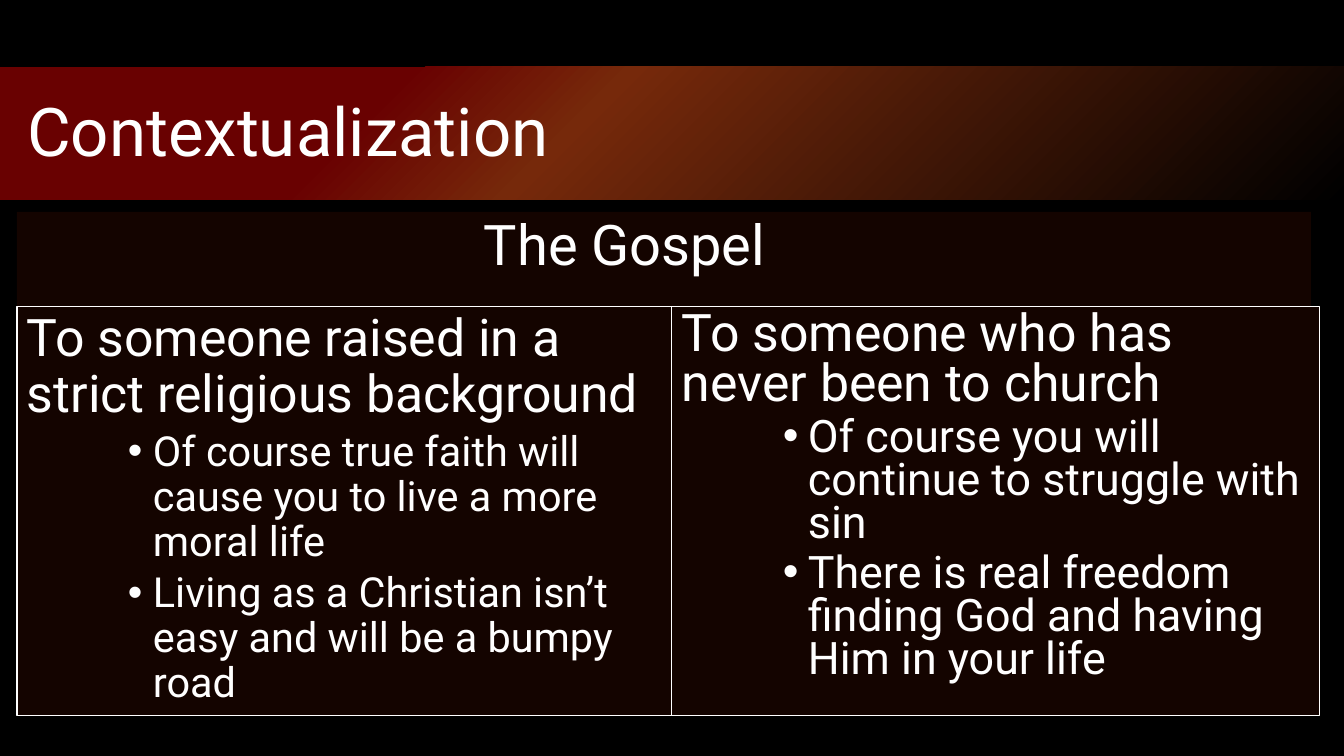
from lxml.etree import SubElement
from pptx import Presentation
from pptx.dml.color import RGBColor
from pptx.enum.shapes import MSO_SHAPE
from pptx.enum.text import MSO_ANCHOR, MSO_AUTO_SIZE, PP_ALIGN
from pptx.oxml import parse_xml
from pptx.oxml.ns import nsdecls, qn
from pptx.util import Emu, Pt

THEME = {
    "font": "Roboto", "text": "FFFFFF", "background": "000000",
    "panel": "A62805", "panel_alpha": 12,
    "bar": [(0, "000000"), (57, "76290B"), (72, "690101")],
    "title": 48, "subject": 40, "heading": 37,
}
TITLE_ONLY = 5


def px(length):
    return Emu(round(length * 12192000 / 1344))


def write(para, text, size, spacing, before=0, indent=0, hanging=0):
    """Fill one paragraph; a hanging indent gets a bullet."""
    props = para._p.get_or_add_pPr()
    props.set("marL", str(px(indent)))
    props.set("indent", str(-px(hanging)))
    para.alignment = PP_ALIGN.LEFT
    para.line_spacing = spacing
    para.space_before = Pt(before)
    if hanging:
        SubElement(props, qn("a:buFont"), typeface="Arial")
        SubElement(props, qn("a:buChar"), char="•")
    span = para.add_run()
    span.text = text
    span.font.name = THEME["font"]
    span.font.size = Pt(size)
    span.font.color.rgb = RGBColor.from_string(THEME["text"])


deck = Presentation()
deck.slide_width, deck.slide_height = px(1344), px(756)
page = deck.slides.add_slide(deck.slide_layouts[TITLE_ONLY])
page.background.fill.solid()
page.background.fill.fore_color.rgb = RGBColor.from_string(THEME["background"])

# Title bar with a radial gradient from the bottom right corner
bar = page.shapes.add_shape(MSO_SHAPE.RECTANGLE, 0, px(67), px(1344), px(133))
bar.shadow.inherit = False
bar.line.fill.background()
bar.fill.background()
stops = "".join(
    f'<a:gs pos="{place * 1000}"><a:srgbClr val="{color}"/></a:gs>'
    for place, color in THEME["bar"])
gradient = parse_xml(
    f'<a:gradFill {nsdecls("a")} rotWithShape="1"><a:gsLst>{stops}</a:gsLst>'
    '<a:path path="circle"><a:fillToRect l="100000" t="100000"/></a:path>'
    '</a:gradFill>')
bar_props = bar.element.spPr
bar_props.replace(bar_props.find(qn("a:noFill")), gradient)

# Title, brought in front of the bar
title = page.shapes.title
title.left, title.top, title.width, title.height = px(17), px(75), px(1294), px(119)
title.text_frame.auto_size = MSO_AUTO_SIZE.NONE
title.text_frame.vertical_anchor = MSO_ANCHOR.MIDDLE
write(title.text_frame.paragraphs[0], "Contextualization", THEME["title"], 0.9)
page.shapes._spTree.append(title.element)

# Panels: left, top, width, height, outlined, line spacing, bullet size,
# first line (text, size, indent), bullets
panels = [
    (17, 212, 1294, 95, False, 0.9, 0,
     ("The Gospel", THEME["subject"], 457), []),
    (17, 307, 655, 409, True, 0.9, 29.6,
     ("To someone raised in a strict religious background", THEME["heading"], 0),
     ["Of course true faith will cause you to live a more moral life",
      "Living as a Christian isn’t easy and will be a bumpy road"]),
    (672, 307, 648, 409, True, 0.8, 32,
     ("To someone who has never been to church", THEME["heading"], 0),
     ["Of course you will continue to struggle with sin",
      "There is real freedom finding God and having Him in your life"]),
]
for left, top, width, height, outlined, spacing, bullet_size, first, bullets in panels:
    panel = page.shapes.add_shape(
        MSO_SHAPE.RECTANGLE, px(left), px(top), px(width), px(height))
    panel.shadow.inherit = False
    panel.fill.solid()
    panel.fill.fore_color.rgb = RGBColor.from_string(THEME["panel"])
    color = panel.element.spPr.find(qn("a:solidFill")).find(qn("a:srgbClr"))
    SubElement(color, qn("a:alpha"), val=str(THEME["panel_alpha"] * 1000))
    if outlined:
        panel.line.color.rgb = RGBColor.from_string(THEME["text"])
        panel.line.width = Pt(0.75)
    else:
        panel.line.fill.background()
    frame = panel.text_frame
    frame.word_wrap = True
    frame.vertical_anchor = MSO_ANCHOR.TOP
    text, size, indent = first
    write(frame.paragraphs[0], text, size, spacing, indent=indent)
    for bullet in bullets:
        write(frame.add_paragraph(), bullet, bullet_size, spacing,
              before=5, indent=126, hanging=25)

deck.save("out.pptx")
